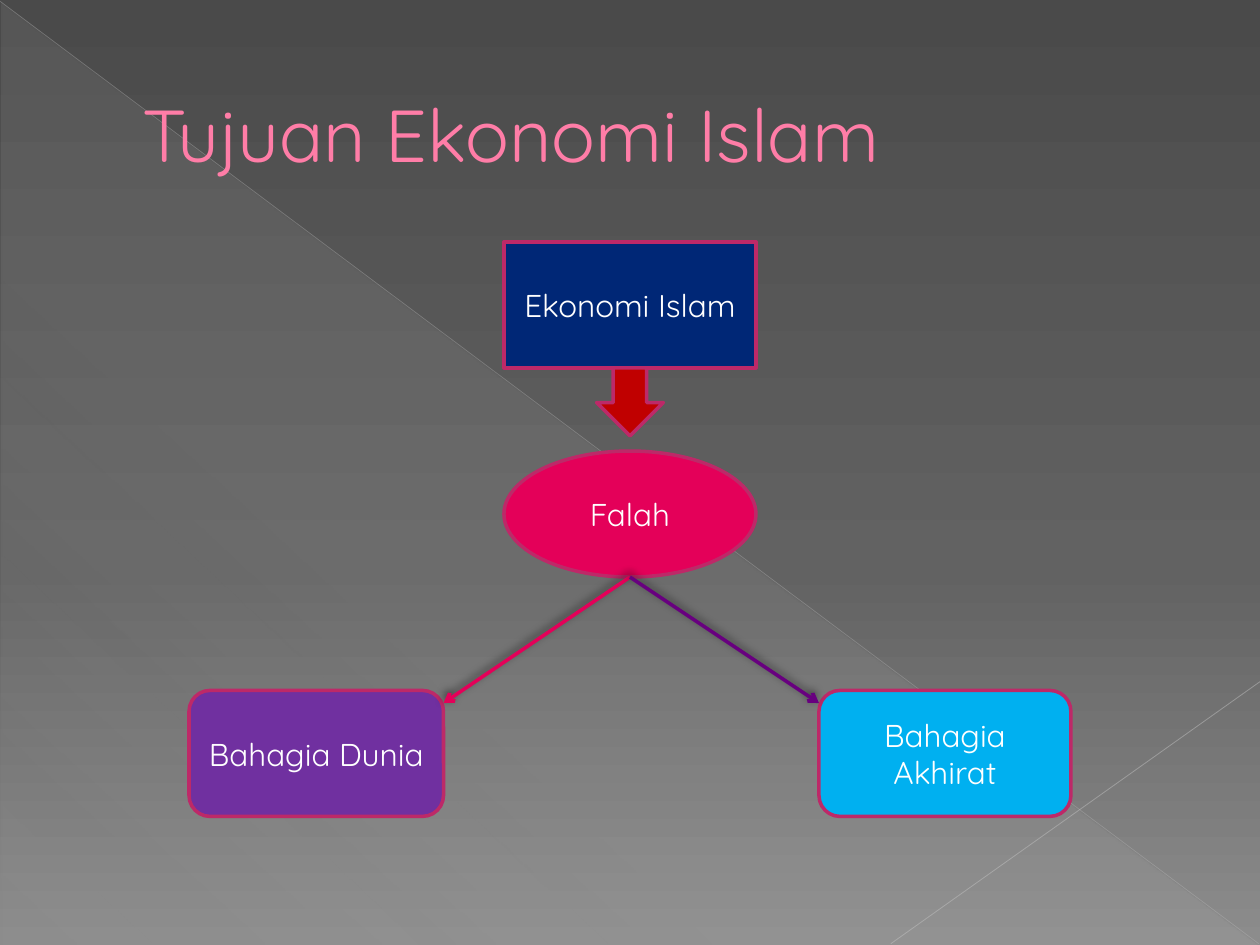
"""Build a slide on the aims of Islamic economics as a small flow diagram."""
from lxml import etree
from pptx import Presentation
from pptx.dml.color import RGBColor
from pptx.enum.shapes import MSO_CONNECTOR, MSO_SHAPE
from pptx.enum.text import MSO_ANCHOR, PP_ALIGN
from pptx.oxml import parse_xml
from pptx.oxml.ns import nsdecls, qn
from pptx.util import Inches, Pt

RECT, OVAL, ROUNDED = MSO_SHAPE.RECTANGLE, MSO_SHAPE.OVAL, MSO_SHAPE.ROUNDED_RECTANGLE
DOWN_ARROW, TRIANGLE = MSO_SHAPE.DOWN_ARROW, MSO_SHAPE.RIGHT_TRIANGLE
STRAIGHT, MIDDLE, CENTER = MSO_CONNECTOR.STRAIGHT, MSO_ANCHOR.MIDDLE, PP_ALIGN.CENTER

WIDTH, HEIGHT = 10, 7.5
THEME = {
    "font": "Quicksand", "title_size": 42, "label_size": 18,
    "title": "FF7DA7", "label": "FFFFFF", "border": "BD2968", "border_width": 2,
    "arrow": "C00000",
    "background": [(0, "4A4A4A", 100), (60, "626262", 100), (100, "8C8C8C", 100)],
    "sheen": [(0, "D2D2D2", 10), (70, "D2D2D2", 8), (100, "D2D2D2", 1)],
}

TITLE = "Tujuan Ekonomi Islam"
NODES = {
    "source": ("Ekonomi Islam", RECT, "002776", 4, 1.92, 2),
    "goal": ("Falah", OVAL, "E40059", 4, 3.58, 2),
    "hereafter": ("Bahagia Akhirat", ROUNDED, "00B0F0", 6.5, 5.48, 2),
    "world": ("Bahagia Dunia", ROUNDED, "7030A0", 1.5, 5.48, 2.02),
}
NODE_HEIGHT = 1
ARROW_WIDTH, ARROW_HEIGHT = 0.53, 0.54
BRANCH_DROP = 0.1
DECOR_LINES = [
    ((0, 0.01), (9.99, 7.49), "BFBFBF", 0.39, 35),
    ((WIDTH, 5.41), (7.07, 7.49), "C6C6C6", 0.47, 45),
]
SHADOW = (
    f'<a:effectLst {nsdecls("a")}><a:outerShdw blurRad="{Pt(5)}" dist="{Pt(2)}" '
    f'dir="{245 * 60000}" rotWithShape="0"><a:srgbClr val="000000">'
    '<a:alpha val="50000"/></a:srgbClr></a:outerShdw></a:effectLst>'
)
NO_EFFECT = f'<a:effectLst {nsdecls("a")}/>'


def set_all(target, values):
    for name, value in values.items():
        setattr(target, name, value)


def set_gradient(fill, owner, stops, angle):
    fill.gradient()
    gradient = next(owner.iter(qn("a:gradFill")))
    marks = "".join(
        f'<a:gs pos="{place * 1000}"><a:srgbClr val="{color}">'
        f'<a:alpha val="{alpha * 1000}"/></a:srgbClr></a:gs>'
        for place, color, alpha in stops
    )
    gradient.getparent().replace(gradient, parse_xml(
        f'<a:gradFill {nsdecls("a")} rotWithShape="1"><a:gsLst>{marks}</a:gsLst>'
        f'<a:lin ang="{angle * 60000}" scaled="0"/></a:gradFill>'))


def add_figure(slide, kind, left, top, width, height):
    figure = slide.shapes.add_shape(kind, *map(Inches, (left, top, width, height)))
    figure.shadow.inherit = False
    return figure


def paint(figure, color):
    figure.fill.solid()
    figure.fill.fore_color.rgb = RGBColor.from_string(color)
    figure.line.color.rgb = RGBColor.from_string(THEME["border"])
    figure.line.width = Pt(THEME["border_width"])


def write(frame, text, role, align=None):
    set_all(frame, {"word_wrap": True, "vertical_anchor": MIDDLE})
    paragraph = frame.paragraphs[0]
    paragraph.alignment = align
    run = paragraph.add_run()
    run.text = text
    set_all(run.font, {"name": THEME["font"], "size": Pt(THEME[f"{role}_size"])})
    run.font.color.rgb = RGBColor.from_string(THEME[role])
    return paragraph


def add_line(slide, start, end, color, width, effect):
    line = slide.shapes.add_connector(STRAIGHT, *map(Inches, (*start, *end)))
    line.line.color.rgb = RGBColor.from_string(color)
    line.line.width = Pt(width)
    line._element.spPr.append(parse_xml(effect))
    return line


def add_backdrop(slide):
    set_gradient(slide.background.fill, slide._element, THEME["background"], 90)
    sheen = add_figure(slide, TRIANGLE, 0.01, 0.02, WIDTH - 0.02, HEIGHT - 0.02)
    set_gradient(sheen.fill, sheen._element, THEME["sheen"], 133)
    sheen.line.fill.background()
    for start, end, color, width, alpha in DECOR_LINES:
        line = add_line(slide, start, end, color, width, NO_EFFECT)
        tint = next(line._element.spPr.iter(qn("a:srgbClr")))
        etree.SubElement(tint, qn("a:alpha"), val=str(alpha * 1000))


def add_diagram(slide):
    for label, kind, color, left, top, width in NODES.values():
        node = add_figure(slide, kind, left, top, width, NODE_HEIGHT)
        paint(node, color)
        write(node.text_frame, label, "label", CENTER)

    source_bottom = NODES["source"][4] + NODE_HEIGHT
    arrow = add_figure(slide, DOWN_ARROW, (WIDTH - ARROW_WIDTH) / 2, source_bottom,
                       ARROW_WIDTH, ARROW_HEIGHT)
    paint(arrow, THEME["arrow"])

    fork = (WIDTH / 2, NODES["goal"][4] + NODE_HEIGHT)
    _, _, _, world_left, branch_top, world_width = NODES["world"]
    branches = [(world_left + world_width, "E40059"), (NODES["hereafter"][3], "68007F")]
    for tip, color in branches:
        branch = add_line(slide, fork, (tip, branch_top + BRANCH_DROP), color,
                          THEME["border_width"], SHADOW)
        etree.SubElement(branch.line._get_or_add_ln(), qn("a:tailEnd"), type="arrow")


def main():
    deck = Presentation()
    set_all(deck, {"slide_width": Inches(WIDTH), "slide_height": Inches(HEIGHT)})
    slide = deck.slides.add_slide(deck.slide_layouts[6])
    add_backdrop(slide)
    heading = slide.shapes.add_textbox(*map(Inches, (0.5, 0.29, WIDTH - 1, 1.53)))
    paragraph = write(heading.text_frame, TITLE, "title")
    paragraph._p.get_or_add_pPr().set("marL", str(Inches(0.53)))
    add_diagram(slide)
    deck.save("out.pptx")


if __name__ == "__main__":
    main()
